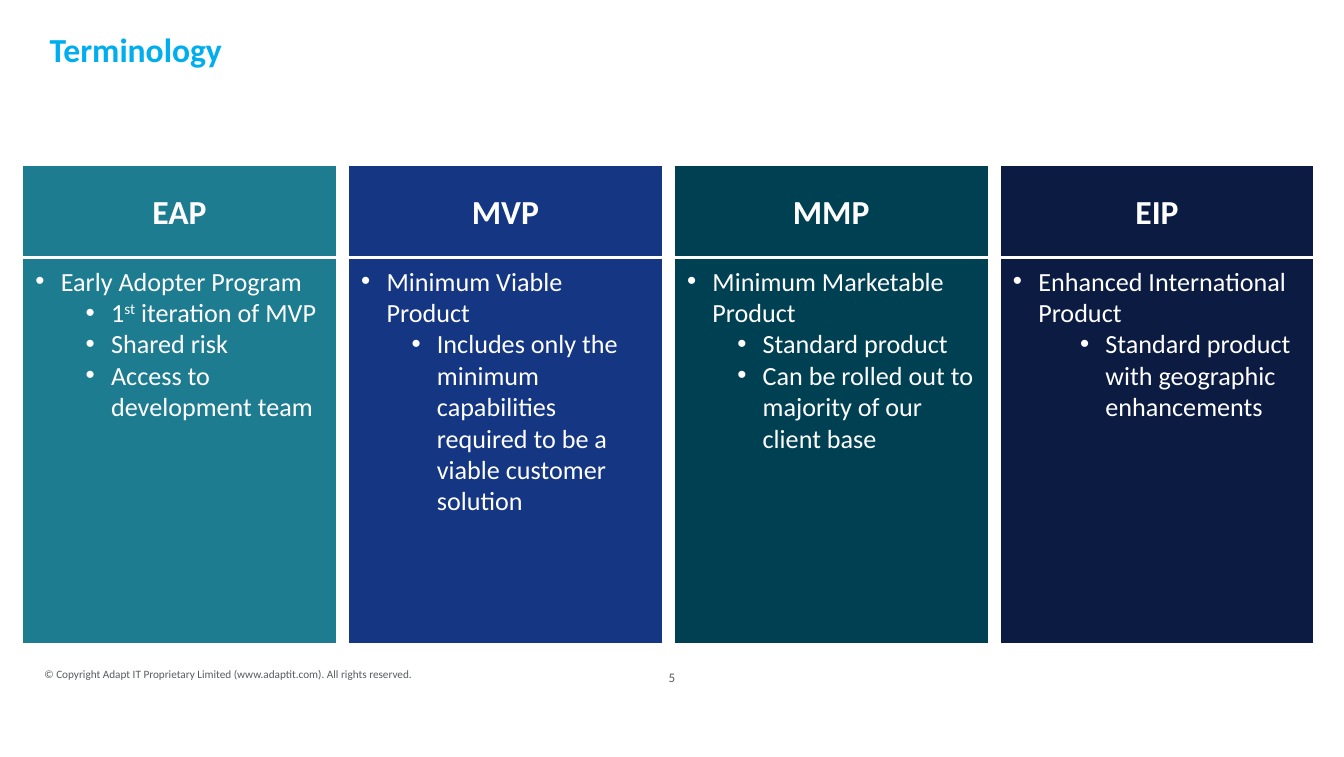
from lxml.etree import SubElement
from pptx import Presentation
from pptx.dml.color import RGBColor
from pptx.enum.shapes import MSO_SHAPE
from pptx.enum.text import MSO_ANCHOR, PP_ALIGN
from pptx.oxml.ns import qn
from pptx.util import Cm, Pt

HUES = {"teal": "1E7C91", "blue": "153683", "pine": "004053", "navy": "0B1B42",
        "sky": "00AEEF", "grey": "585C5E", "white": "FFFFFF"}
FORMS = {
    "title": {"name": "Calibri", "size": Pt(18), "bold": True},
    "body": {"name": "Calibri", "size": Pt(14)},
    "note": {"name": "Calibri", "size": Pt(6)},
    "page": {"name": "Calibri", "size": Pt(7)},
}
TERMS = [
    ("EAP", "teal", 1.43, "Early Adopter Program",
     ["1^st^ iteration of MVP", "Shared risk", "Access to development team"]),
    ("MVP", "blue", 1.43, "Minimum Viable Product",
     ["Includes only the minimum capabilities required to be a viable customer solution"]),
    ("MMP", "pine", 1.43, "Minimum Marketable Product",
     ["Standard product", "Can be rolled out to majority of our client base"]),
    ("EIP", "navy", 1.75, "Enhanced International Product",
     ["Standard product with geographic enhancements"]),
]


def tint(hue):
    """Return the named colour."""
    return RGBColor.from_string(HUES[hue])


def write(para, text, form, hue, align=PP_ALIGN.LEFT):
    """Fill a paragraph, raising whatever stands between carets."""
    para.alignment = align
    for index, part in enumerate(text.split("^")):
        run = para.add_run()
        run.text = part
        for key, value in FORMS[form].items():
            setattr(run.font, key, value)
        run.font.color.rgb = tint(hue)
        if index % 2:
            run._r.get_or_add_rPr().set("baseline", "30000")


def mark(para, indent, level):
    """Give a paragraph a hanging bullet."""
    para.level = level
    props = para._p.get_or_add_pPr()
    props.set("marL", str(Cm(indent)))
    props.set("indent", str(Cm(-0.48)))
    SubElement(props, qn("a:buFont"), typeface="Arial")
    SubElement(props, qn("a:buChar"), char="•")


def label(slide, box, text, form, hue, align=PP_ALIGN.LEFT, inset=True):
    """Place a line of text centred vertically in a box."""
    frame = slide.shapes.add_textbox(*map(Cm, box)).text_frame
    frame.vertical_anchor = MSO_ANCHOR.MIDDLE
    frame.word_wrap = inset
    if not inset:
        for side in ("left", "right", "top", "bottom"):
            setattr(frame, f"margin_{side}", 0)
    write(frame.paragraphs[0], text, form, hue, align)
    return frame


def panel(slide, box, hue, anchor):
    """Draw a filled rectangle and return its text frame."""
    shape = slide.shapes.add_shape(MSO_SHAPE.RECTANGLE, *map(Cm, box))
    shape.shadow.inherit = False
    shape.fill.solid()
    shape.fill.fore_color.rgb = tint(hue)
    shape.line.color.rgb = tint("white")
    shape.line.width = Pt(1)
    frame = shape.text_frame
    frame.word_wrap = True
    frame.vertical_anchor = anchor
    return frame


def column(slide, box, term):
    """Stack a term's heading over its explanation."""
    left, top, width, height = box
    name, hue, indent, lead, points = term
    head, gap = 1.73, 0.03
    frame = panel(slide, (left, top, width, head), hue, MSO_ANCHOR.MIDDLE)
    write(frame.paragraphs[0], name, "title", "white", PP_ALIGN.CENTER)
    rest = (left, top + head + gap, width, height - head - gap)
    frame = panel(slide, rest, hue, MSO_ANCHOR.TOP)
    mark(frame.paragraphs[0], 0.48, 0)
    write(frame.paragraphs[0], lead, "body", "white")
    for point in points:
        para = frame.add_paragraph()
        mark(para, indent, 1)
        write(para, point, "body", "white")


def columns(slide, box):
    """Share a box evenly among the terms."""
    left, top, width, height = box
    gap = 0.21
    wide = (width - gap * (len(TERMS) - 1)) / len(TERMS)
    for index, term in enumerate(TERMS):
        column(slide, (left + index * (wide + gap), top, wide, height), term)


def footer(slide, box):
    """Place the copyright line and the page number."""
    left, top, width, height = box
    label(slide, (left, top, 8.76, 1.17),
          "© Copyright Adapt IT Proprietary Limited (www.adaptit.com). All rights reserved.",
          "note", "grey", inset=False)
    label(slide, (left + width - 3.5, top, 3.5, height), "5", "page", "grey",
          PP_ALIGN.CENTER, inset=False)


def main():
    """Build the slide and save it."""
    deck = Presentation()
    deck.slide_width, deck.slide_height = Cm(25.4), Cm(14.3)
    slide = deck.slides.add_slide(deck.slide_layouts[6])
    title = label(slide, (0.69, 0.23, 22.53, 1.35), "Terminology", "title", "sky")
    title.paragraphs[0].line_spacing = Pt(22.6)
    columns(slide, (0.42, 3.12, 24.42, 9.04))
    footer(slide, (0.84, 12.14, 13.61, 1.32))
    deck.save("out.pptx")


if __name__ == "__main__":
    main()
